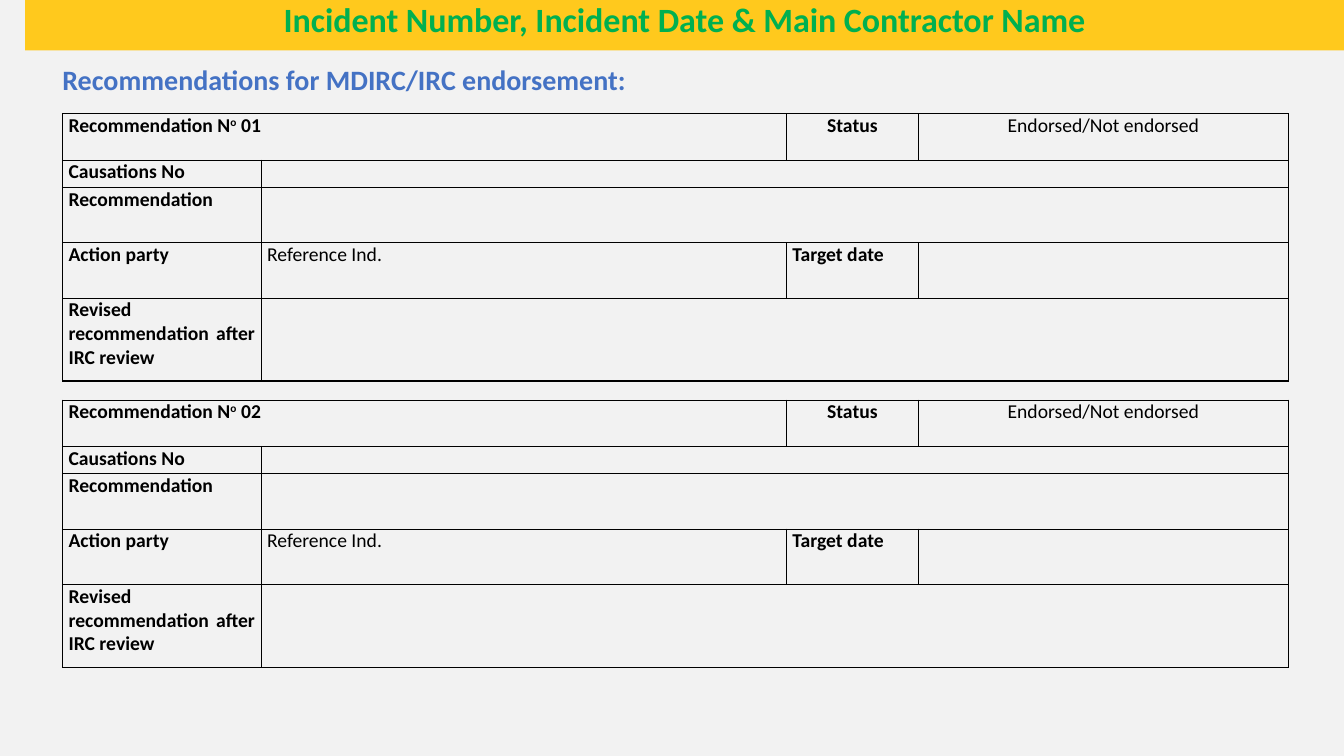
from lxml.etree import SubElement
from pptx import Presentation
from pptx.dml.color import RGBColor
from pptx.enum.shapes import MSO_SHAPE as Shape
from pptx.enum.text import MSO_ANCHOR as Anchor, PP_ALIGN as Align
from pptx.oxml.ns import qn
from pptx.util import Inches, Pt

COLUMNS = [1.97, 5.21, 1.31, 3.67]
ROWS = [0.46, 0.27, 0.55, 0.55, 0.82]
MERGES = [(0, 0, 1), (1, 1, 3), (2, 1, 3), (4, 1, 3)]  # row, first and last column


def color(value):
    return RGBColor.from_string(value)


class SlideBuilder:
    font_name = "Calibri"
    background = "F2F2F2"
    ink = "000000"
    table_size = 14

    def __init__(self, presentation):
        self.slide = presentation.slides.add_slide(presentation.slide_layouts[6])
        fill = self.slide.background.fill
        fill.solid()
        fill.fore_color.rgb = color(self.background)

    def add_text(self, paragraph, text, size, ink, bold=True):
        run = paragraph.add_run()
        run.text = text
        for name, value in {"name": self.font_name, "size": Pt(size), "bold": bold}.items():
            setattr(run.font, name, value)
        run.font.color.rgb = color(ink)
        return run

    def banner(self, text, left, top, width, height, fill, ink, size):
        shape = self.slide.shapes.add_shape(
            Shape.RECTANGLE, Inches(left), Inches(top), Inches(width), Inches(height))
        shape.shadow.inherit = False
        shape.fill.solid()
        shape.fill.fore_color.rgb = color(fill)
        shape.line.fill.background()
        frame = shape.text_frame
        layout = {"vertical_anchor": Anchor.MIDDLE, "word_wrap": True,
                  "margin_top": 0, "margin_bottom": Inches(0.08)}
        for name, value in layout.items():
            setattr(frame, name, value)
        paragraph = frame.paragraphs[0]
        paragraph.alignment = Align.CENTER
        paragraph.line_spacing = 0.9
        self.add_text(paragraph, text, size, ink)

    def heading(self, text, left, top, width, height, ink, size):
        box = self.slide.shapes.add_textbox(
            Inches(left), Inches(top), Inches(width), Inches(height))
        box.text_frame.word_wrap = False
        paragraph = box.text_frame.paragraphs[0]
        paragraph.line_spacing = 0.8
        self.add_text(paragraph, text, size, ink)

    def format_cell(self, cell):
        cell.fill.background()
        margins = {"margin_left": 0.06, "margin_right": 0.06, "margin_top": 0, "margin_bottom": 0}
        for name, value in margins.items():
            setattr(cell, name, Inches(value))
        # Borders come before the fill in the cell properties
        properties = cell._tc.get_or_add_tcPr()
        for index, side in enumerate(("a:lnL", "a:lnR", "a:lnT", "a:lnB")):
            line = SubElement(properties, qn(side), w=str(Pt(1)))
            solid = SubElement(line, qn("a:solidFill"))
            SubElement(solid, qn("a:srgbClr"), val=self.ink)
            properties.insert(index, line)
        # Keeps empty cells at the table's text size
        paragraph = cell.text_frame.paragraphs[0]
        SubElement(paragraph._p, qn("a:endParaRPr"), sz=str(self.table_size * 100))

    def cell_text(self, cell, text, alignment=Align.JUSTIFY, bold=True):
        paragraph = cell.text_frame.paragraphs[0]
        paragraph.alignment = alignment
        return self.add_text(paragraph, text, self.table_size, self.ink, bold)

    def recommendation(self, number, left, top):
        frame = self.slide.shapes.add_table(
            len(ROWS), len(COLUMNS), Inches(left), Inches(top),
            Inches(sum(COLUMNS)), Inches(sum(ROWS)))
        table = frame.table
        table.first_row = table.horz_banding = False
        for column, width in zip(table.columns, COLUMNS):
            column.width = Inches(width)
        for row, height in zip(table.rows, ROWS):
            row.height = Inches(height)
        for cell in table.iter_cells():
            self.format_cell(cell)
        for row, first, last in MERGES:
            table.cell(row, first).merge(table.cell(row, last))

        # Header row
        title = table.cell(0, 0)
        self.cell_text(title, "Recommendation N", Align.LEFT)
        ordinal = self.cell_text(title, "o", Align.LEFT)
        ordinal.font._element.set("baseline", "30000")
        self.cell_text(title, f" {number:02d}", Align.LEFT)
        self.cell_text(table.cell(0, 2), "Status", Align.CENTER)
        self.cell_text(table.cell(0, 3), "Endorsed/Not endorsed", Align.CENTER, bold=False)

        # Row labels and action details
        labels = ["Causations No", "Recommendation", "Action party",
                  "Revised recommendation after IRC review"]
        for row, label in enumerate(labels, start=1):
            self.cell_text(table.cell(row, 0), label)
        self.cell_text(table.cell(3, 1), "Reference Ind.", bold=False)
        self.cell_text(table.cell(3, 2), "Target date")


def main():
    presentation = Presentation()
    presentation.slide_width = Inches(13.33)
    presentation.slide_height = Inches(7.5)
    builder = SlideBuilder(presentation)

    # Title and heading
    builder.banner("Incident Number, Incident Date & Main Contractor Name",
                   0.25, 0, 13.08, 0.5, "FFC91D", "00B050", 24.3)
    builder.heading("Recommendations for MDIRC/IRC endorsement:",
                    0.52, 0.64, 5.84, 0.38, "4472C4", 20)

    # Recommendation tables
    for number, top in enumerate((1.13, 3.97), start=1):
        builder.recommendation(number, 0.62, top)

    presentation.save("out.pptx")


if __name__ == "__main__":
    main()
